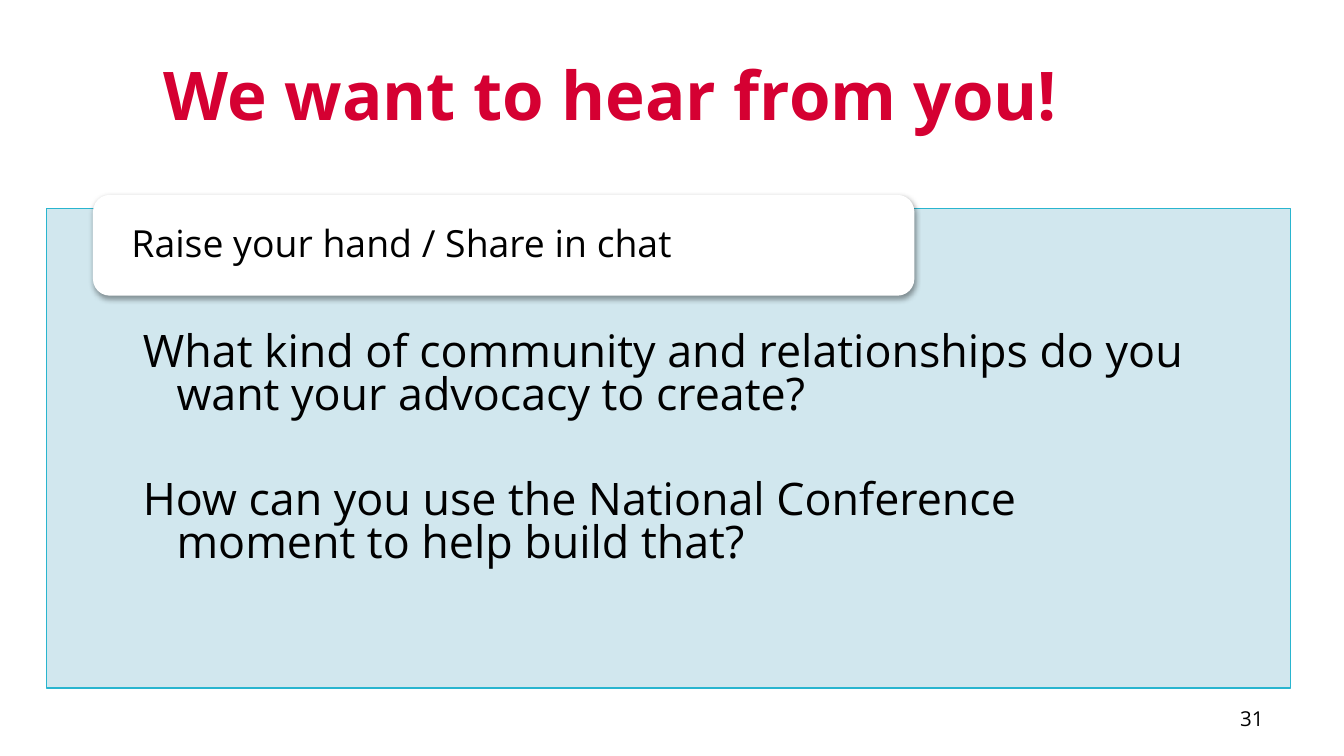
from lxml.etree import SubElement
from pptx import Presentation
from pptx.dml.color import RGBColor
from pptx.enum.shapes import MSO_SHAPE
from pptx.enum.text import MSO_ANCHOR, PP_ALIGN
from pptx.oxml.ns import qn
from pptx.util import Pt

RED = RGBColor(0xD5, 0x00, 0x32)
BLACK = RGBColor(0, 0, 0)
WHITE = RGBColor(0xFF, 0xFF, 0xFF)
PALE_BLUE = RGBColor(0xCD, 0xE5, 0xED)
TEAL = RGBColor(0x29, 0xB5, 0xCF)
FONT = "Open Sans"
QUESTIONS = [
    "What kind of community and relationships do you want your advocacy to create?",
    "How can you use the National Conference moment to help build that?",
]


def apply_format(target, values):
    for name, value in values.items():
        setattr(target, name, value)


def write_text(shape, texts, size, color=BLACK, bold=False,
               margins=(7.2, 3.6, 7.2, 3.6), anchor=MSO_ANCHOR.MIDDLE, **layout):
    frame = shape.text_frame
    left, top, right, bottom = map(Pt, margins)
    apply_format(frame, {
        "word_wrap": True, "vertical_anchor": anchor,
        "margin_left": left, "margin_top": top,
        "margin_right": right, "margin_bottom": bottom,
    })
    frame.text = "\n".join(texts)
    for paragraph in frame.paragraphs:
        apply_format(paragraph, layout)
        apply_format(paragraph.font, {"name": FONT, "size": Pt(size), "bold": bold})
        paragraph.font.color.rgb = color


def add_label(slide, box, text, size, alignment, **style):
    label = slide.shapes.add_textbox(*map(Pt, box))
    write_text(label, [text], size, alignment=alignment, **style)


def add_block(slide, kind, box, color):
    block = slide.shapes.add_shape(kind, *map(Pt, box))
    block.shadow.inherit = False
    block.fill.solid()
    block.fill.fore_color.rgb = color
    block.line.fill.background()
    return block


def set_alpha(color_element, percent):
    SubElement(color_element, qn("a:alpha"), val=str(percent * 1000))


def add_shadow(shape):
    effects = shape._element.spPr.find(qn("a:effectLst"))
    shadow = SubElement(effects, qn("a:outerShdw"), blurRad=str(Pt(3.1)),
                        dist=str(Pt(1.6)), dir="5400000", rotWithShape="0")
    set_alpha(SubElement(shadow, qn("a:srgbClr"), val=str(BLACK)), 38)


def add_question_panel(slide, box, heading, questions):
    left, top, width, height = box
    panel = add_block(slide, MSO_SHAPE.RECTANGLE, box, PALE_BLUE)
    set_alpha(panel._element.spPr.find(qn("a:solidFill"))[0], 90)
    panel.line.color.rgb = TEAL
    panel.line.width = Pt(0.75)
    write_text(panel, questions, 24, margins=(51.8, 67, 51.8, 14),
               anchor=MSO_ANCHOR.TOP, alignment=PP_ALIGN.LEFT,
               line_spacing=0.8, space_after=Pt(33))
    for paragraph in panel.text_frame.paragraphs:
        properties = paragraph._p.get_or_add_pPr()
        properties.set("marL", str(Pt(18)))
        properties.set("indent", str(-Pt(18)))

    card = add_block(slide, MSO_SHAPE.ROUNDED_RECTANGLE,
                     (left + 25, top - 7.2, width * 0.66, 54), WHITE)
    add_shadow(card)
    write_text(card, [heading], 20, margins=(18, 0, 18, 0),
               alignment=PP_ALIGN.LEFT, line_spacing=0.9)


def main():
    presentation = Presentation()
    apply_format(presentation, {"slide_width": Pt(720), "slide_height": Pt(405)})
    slide = presentation.slides.add_slide(presentation.slide_layouts[6])
    add_label(slide, (36, 16.5, 582.5, 67.7), "We want to hear from you!", 36,
              PP_ALIGN.CENTER, color=RED, bold=True)
    add_question_panel(slide, (24.8, 111.6, 666.7, 257),
                       "Raise your hand / Share in chat", QUESTIONS)
    add_label(slide, (516, 374, 168, 21.6), "31", 11, PP_ALIGN.RIGHT)
    presentation.save("out.pptx")


if __name__ == "__main__":
    main()
